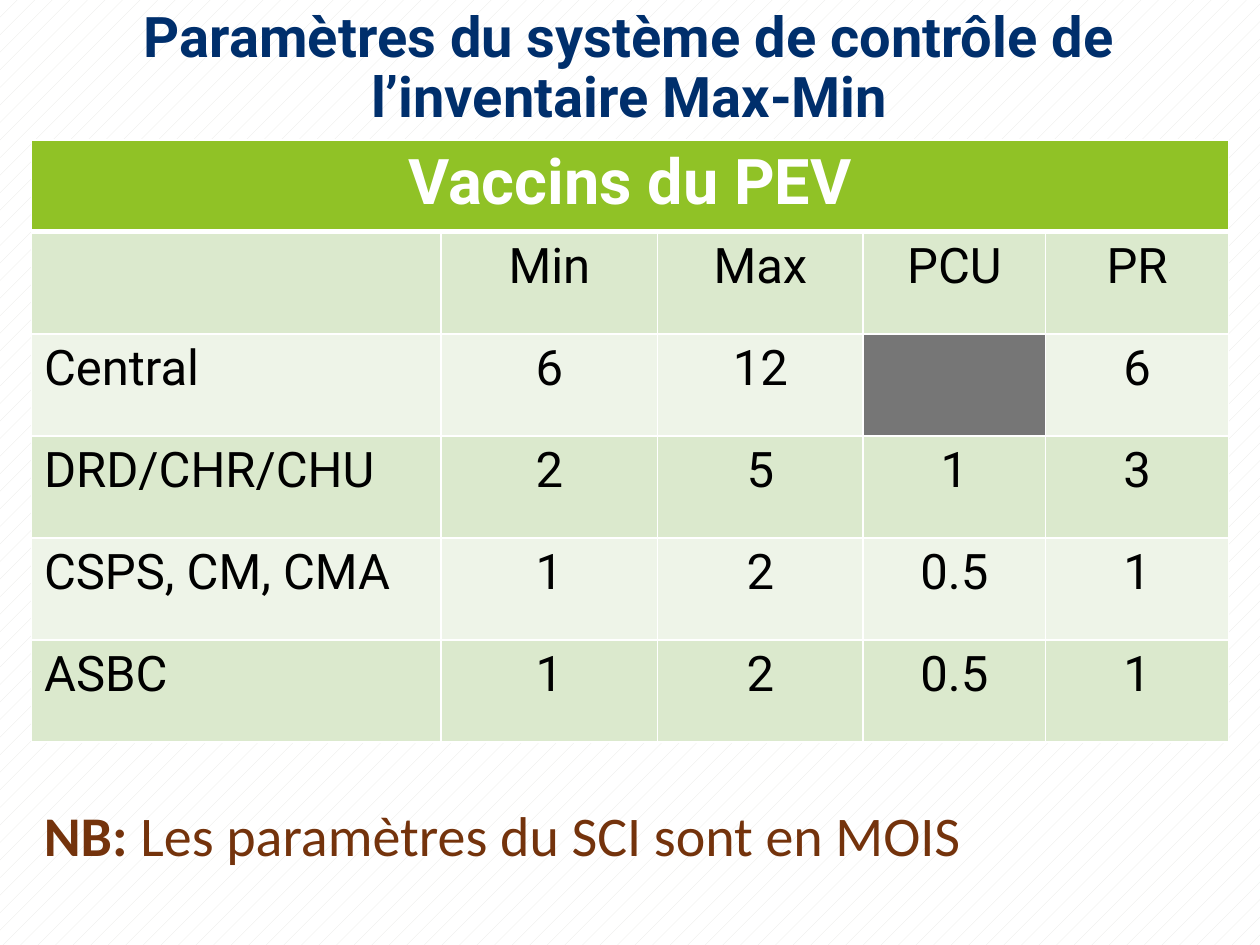
"""Build the slide on the Max-Min inventory control parameters."""
from pptx import Presentation
from pptx.dml.color import RGBColor
from pptx.enum.dml import MSO_PATTERN
from pptx.enum.text import MSO_ANCHOR, PP_ALIGN
from pptx.oxml import parse_xml
from pptx.oxml.ns import nsdecls
from pptx.util import Inches, Pt

COLORS = {
    "title": "002F6C", "note": "74330C", "header": "90C226",
    "band_dark": "DBE9CD", "band_light": "EEF4E8", "unused": "767676",
    "text": "000000", "white": "FFFFFF", "pattern": "E7E7E5",
}
HEADING = "Vaccins du PEV"
LEVELS = [
    ["", "Min", "Max", "PCU", "PR"],
    ["Central", "6", "12", None, "6"],
    ["DRD/CHR/CHU", "2", "5", "1", "3"],
    ["CSPS, CM, CMA", "1", "2", "0.5", "1"],
    ["ASBC", "1", "2", "0.5", "1"],
]
COLUMN_WIDTHS = [3.25, 1.72, 1.63, 1.45, 1.45]
ROW_HEIGHTS = [0.73] + [0.81] * len(LEVELS)


def color(name):
    return RGBColor.from_string(COLORS[name])


def style_font(font, face, size, color_name, bold=None):
    font.name, font.size, font.bold = face, Pt(size), bold
    font.color.rgb = color(color_name)


def set_background(slide):
    fill = slide.background.fill
    fill.patterned()
    fill.pattern = MSO_PATTERN.PERCENT_5
    fill.fore_color.rgb = color("pattern")
    fill.back_color.rgb = color("white")


def add_text(slide, box, runs, face, color_name, align):
    frame = slide.shapes.add_textbox(*map(Inches, box)).text_frame
    frame.word_wrap = True
    frame.vertical_anchor = MSO_ANCHOR.BOTTOM
    paragraph = frame.paragraphs[0]
    paragraph.alignment, paragraph.line_spacing = align, 0.9
    style_font(paragraph.font, face, 32, color_name)
    for text, bold in runs:
        run = paragraph.add_run()
        run.text, run.font.bold = text, bold


def set_borders(cell, bottom=1):
    widths = {"lnL": 1, "lnR": 1, "lnT": 1, "lnB": bottom}
    properties = cell._tc.get_or_add_tcPr()
    for position, (side, width) in enumerate(widths.items()):
        properties.insert(position, parse_xml(
            f'<a:{side} {nsdecls("a")} w="{Pt(width)}"><a:solidFill>'
            f'<a:srgbClr val="{COLORS["white"]}"/></a:solidFill></a:{side}>'))


def fill_cell(cell, text, fill, size=28, font_color="text", bold=False,
              align=PP_ALIGN.CENTER, bottom=1):
    cell.fill.solid()
    cell.fill.fore_color.rgb = color(fill)
    set_borders(cell, bottom)
    cell.text = text
    paragraph = cell.text_frame.paragraphs[0]
    paragraph.alignment = align
    style_font(paragraph.font, "Roboto", size, font_color, bold)


def add_parameters(slide):
    table = slide.shapes.add_table(
        len(ROW_HEIGHTS), len(COLUMN_WIDTHS), Inches(0.25), Inches(1.11),
        Inches(sum(COLUMN_WIDTHS)), Inches(sum(ROW_HEIGHTS))).table
    for column, width in zip(table.columns, COLUMN_WIDTHS):
        column.width = Inches(width)
    for row, height in zip(table.rows, ROW_HEIGHTS):
        row.height = Inches(height)
    for c in range(len(COLUMN_WIDTHS)):
        fill_cell(table.cell(0, c), "" if c else HEADING, "header", 36,
                  "white", True, bottom=3)
    table.cell(0, 0).merge(table.cell(0, len(COLUMN_WIDTHS) - 1))
    for r, level in enumerate(LEVELS, 1):
        band = "band_dark" if r % 2 else "band_light"
        for c, value in enumerate(level):
            fill_cell(table.cell(r, c), value or "",
                      "unused" if value is None else band,
                      align=PP_ALIGN.CENTER if c else PP_ALIGN.LEFT,
                      )


def main():
    deck = Presentation()
    deck.slide_width, deck.slide_height = Inches(10), Inches(7.5)
    slide = deck.slides.add_slide(deck.slide_layouts[6])
    set_background(slide)
    add_parameters(slide)
    add_text(slide, (0.12, 0.01, 9.75, 1.07),
             [("Paramètres du système de contrôle de l’inventaire Max-Min", True)],
             "Roboto", "title", PP_ALIGN.CENTER)
    add_text(slide, (0.25, 6.34, 9.5, 0.6),
             [("NB:", True), (" Les paramètres du SCI sont en MOIS", False)],
             "Calibri", "note", PP_ALIGN.LEFT)
    deck.save("out.pptx")


if __name__ == "__main__":
    main()
